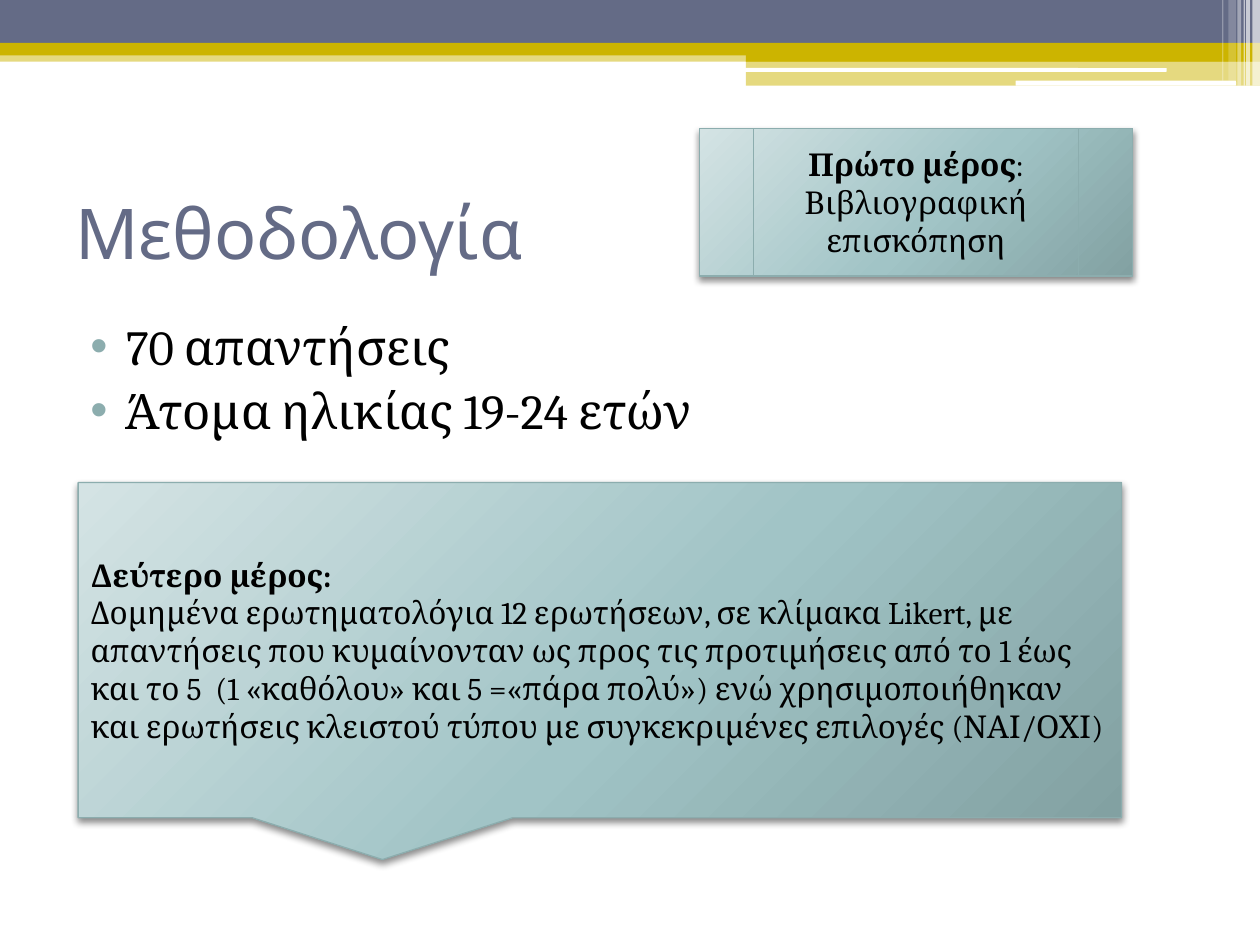
from lxml.etree import SubElement
from pptx import Presentation
from pptx.dml.color import RGBColor
from pptx.enum.shapes import MSO_SHAPE
from pptx.enum.text import MSO_ANCHOR, PP_ALIGN
from pptx.oxml import parse_xml
from pptx.oxml.ns import nsdecls, qn
from pptx.util import Inches, Pt

SLATE, GOLD, WHITE, TEAL, BLACK = "646B86", "CCB400", "FFFFFF", "8CADAE", "000000"
CARD_STOPS = [(0, "D4E3E4"), (55, "A1C4C6"), (100, "82A1A2")]

# left, top, width, height, colour, opacity in percent
HEADER_BARS = [
    (0, 0.4, 10, 0.09, GOLD, 50),
    (0, 0, 10, 0.34, SLATE, 100),
    (0, 0.34, 10, 0.1, GOLD, 100),
    (5.92, 0.39, 4.08, 0.1, GOLD, 100),
    (5.92, 0.48, 4.08, 0.2, GOLD, 50),
]
HEADER_SLOTS = [(5.91, 0.54, 3.35, 0.03), (8.06, 0.64, 1.75, 0.04)]
# left, width, height, opacity in percent
EDGE_STRIPES = [
    (9.94, 0.06, 0.68, 65),
    (9.89, 0.03, 0.68, 65),
    (9.87, 0.01, 0.68, 60),
    (9.82, 0.03, 0.68, 40),
    (9.75, 0.06, 0.64, 20),
    (9.7, 0.01, 0.64, 30),
]

FINDINGS = ["70 απαντήσεις", "Άτομα ηλικίας 19-24 ετών"]
SECOND_PART = (
    "Δομημένα ερωτηματολόγια 12 ερωτήσεων, σε κλίμακα Likert, με απαντήσεις "
    "που κυμαίνονταν ως προς τις προτιμήσεις από το 1 έως και το 5  (1 «καθόλου» "
    "και 5 =«πάρα πολύ») ενώ χρησιμοποιήθηκαν και ερωτήσεις κλειστού τύπου με "
    "συγκεκριμένες επιλογές (ΝΑΙ/ΟΧΙ)"
)


def rgb(colour):
    return RGBColor.from_string(colour)


def add_block(slide, kind, left, top, width, height):
    block = slide.shapes.add_shape(
        kind, Inches(left), Inches(top), Inches(width), Inches(height))
    block.shadow.inherit = False
    return block


def add_bar(slide, left, top, width, height, colour, opacity=100,
            kind=MSO_SHAPE.RECTANGLE):
    bar = add_block(slide, kind, left, top, width, height)
    bar.fill.solid()
    bar.fill.fore_color.rgb = rgb(colour)
    bar.line.fill.background()
    if opacity < 100:
        colour_node = bar.fill._xPr.find(qn("a:solidFill"))[0]
        SubElement(colour_node, qn("a:alpha"), val=str(opacity * 1000))


def add_card(slide, kind, left, top, width, height):
    """Add a teal shape with a radial gradient and a soft shadow."""
    card = add_block(slide, kind, left, top, width, height)
    card.line.color.rgb = rgb(TEAL)
    card.line.width = Pt(0.75)
    stops = "".join(
        f'<a:gs pos="{position * 1000}"><a:srgbClr val="{colour}"/></a:gs>'
        for position, colour in CARD_STOPS)
    properties = card._element.spPr
    properties.find(qn("a:prstGeom")).addnext(parse_xml(
        f'<a:gradFill {nsdecls("a")} rotWithShape="1"><a:gsLst>{stops}</a:gsLst>'
        '<a:path path="circle"><a:fillToRect l="-40000" t="-90000" '
        'r="140000" b="190000"/></a:path></a:gradFill>'))
    properties.find(qn("a:effectLst")).append(parse_xml(
        f'<a:outerShdw {nsdecls("a")} blurRad="{Pt(4)}" dist="{Pt(2)}" '
        'dir="5400000" rotWithShape="0"><a:srgbClr val="000000">'
        '<a:alpha val="45000"/></a:srgbClr></a:outerShdw>'))
    return card


def add_text_box(slide, left, top, width, height):
    return slide.shapes.add_textbox(
        Inches(left), Inches(top), Inches(width), Inches(height))


def write_text(shape, paragraphs, size=18, font="Cambria", colour=BLACK,
               align=PP_ALIGN.LEFT, anchor=MSO_ANCHOR.MIDDLE, before=0):
    """Fill a shape; each paragraph is a list of (text, bold) runs."""
    frame = shape.text_frame
    frame.word_wrap = True
    frame.vertical_anchor = anchor
    for index, runs in enumerate(paragraphs):
        paragraph = frame.add_paragraph() if index else frame.paragraphs[0]
        paragraph.alignment = align
        paragraph.space_before = Pt(before)
        for text, bold in runs:
            run = paragraph.add_run()
            run.text = text
            run.font.size = Pt(size)
            run.font.name = font
            run.font.bold = bold
            run.font.color.rgb = rgb(colour)


def add_bullets(shape, colour):
    for paragraph in shape.text_frame.paragraphs:
        properties = paragraph._p.get_or_add_pPr()
        properties.set("marL", str(Inches(0.4)))
        properties.set("indent", str(Inches(-0.28)))
        bullet_colour = SubElement(properties, qn("a:buClr"))
        SubElement(bullet_colour, qn("a:srgbClr"), val=colour)
        SubElement(properties, qn("a:buFont"), typeface="Arial")
        SubElement(properties, qn("a:buChar"), char="•")


def add_header(slide):
    for bar in HEADER_BARS:
        add_bar(slide, *bar)
    for slot in HEADER_SLOTS:
        add_bar(slide, *slot, WHITE, kind=MSO_SHAPE.ROUNDED_RECTANGLE)
    for left, width, height, opacity in EDGE_STRIPES:
        add_bar(slide, left, 0, width, height, WHITE, opacity)


def main():
    deck = Presentation()
    deck.slide_width, deck.slide_height = Inches(10), Inches(7.5)
    slide = deck.slides.add_slide(deck.slide_layouts[6])
    add_header(slide)

    title = add_text_box(slide, 0.5, 1.25, 9, 1.17)
    write_text(title, [[("Μεθοδολογία", False)]], size=40, font="Cabin", colour=SLATE)

    findings = add_text_box(slide, 0.5, 2.46, 9, 4.73)
    write_text(findings, [[(finding, False)] for finding in FINDINGS],
               size=28, anchor=MSO_ANCHOR.TOP, before=3)
    add_bullets(findings, TEAL)

    second_part = add_card(slide, MSO_SHAPE.RECTANGULAR_CALLOUT, 0.62, 3.83, 8.28, 2.66)
    write_text(second_part, [[("Δεύτερο μέρος:", True)], [(SECOND_PART, False)]])

    first_part = add_card(
        slide, MSO_SHAPE.FLOWCHART_PREDEFINED_PROCESS, 5.55, 1.02, 3.44, 1.17)
    write_text(first_part,
               [[("Πρώτο μέρος", True), (": Βιβλιογραφική επισκόπηση", False)]],
               align=PP_ALIGN.CENTER)

    deck.save("out.pptx")


if __name__ == "__main__":
    main()
